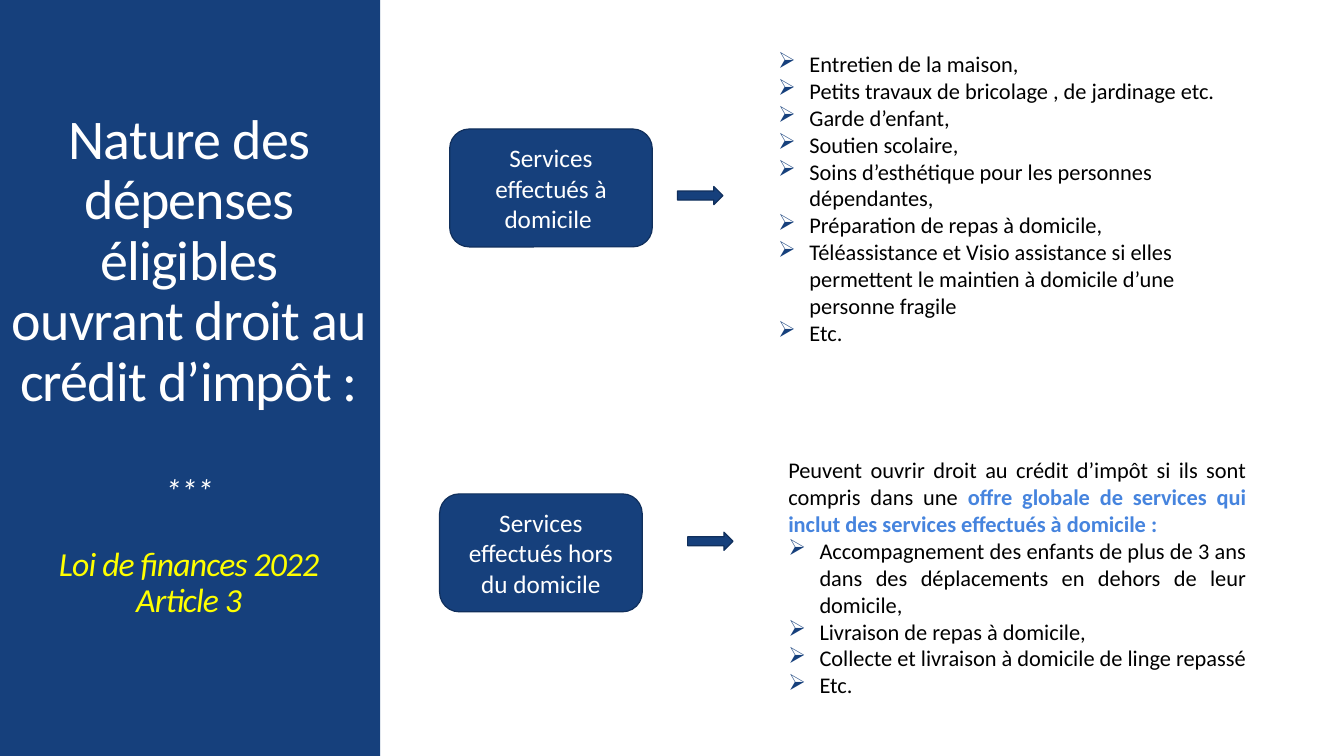
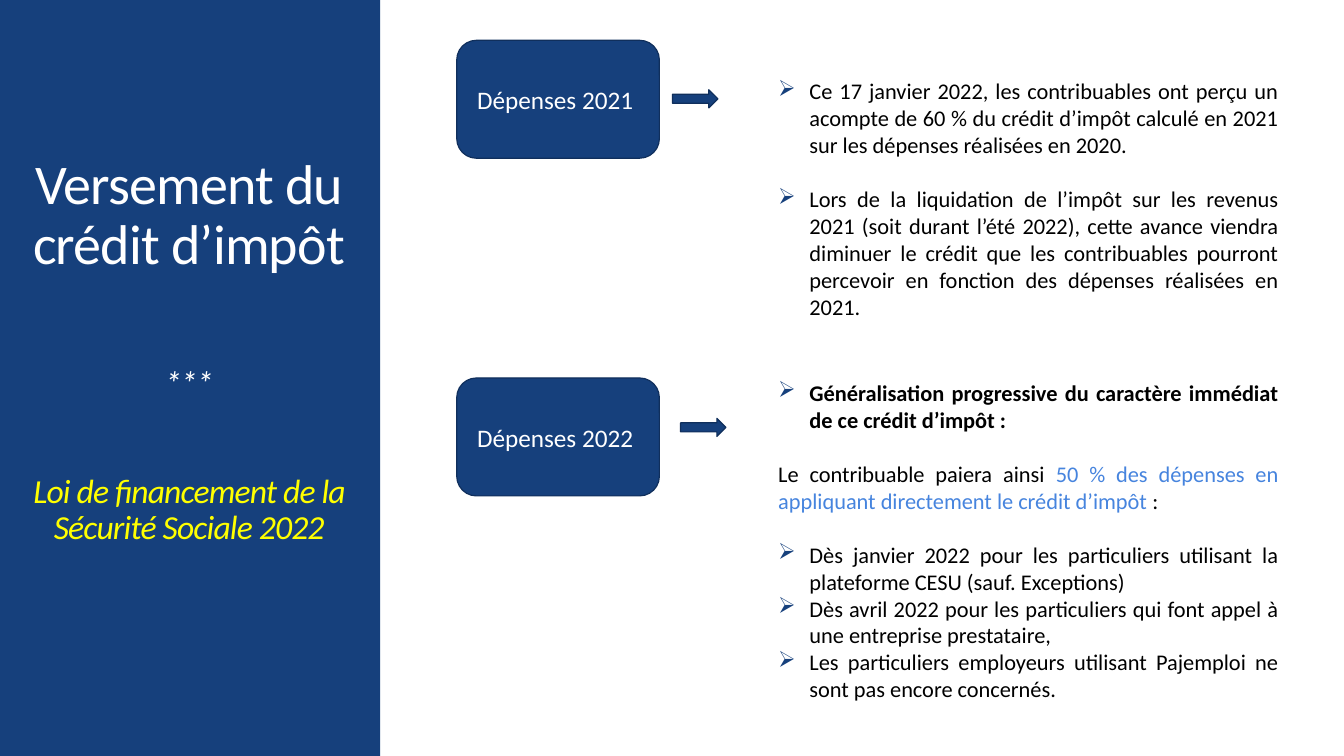
import lxml.etree
import pptx
import pptx.dml.color
import pptx.enum.shapes
import pptx.enum.text
import pptx.oxml.ns
import pptx.util

KIND = pptx.enum.shapes.MSO_SHAPE
ALIGN = pptx.enum.text.PP_ALIGN
ANCHOR = pptx.enum.text.MSO_ANCHOR
SCALE = 9144  # EMU per px, 100 px to the inch


def px(size):
    return pptx.util.Emu(size * SCALE)


class Theme:
    """Colours, type sizes and text styles."""
    font = "Calibri"
    navy, edge, sky = "16407C", "102F5C", "4684DE"
    white, black, yellow = "FFFFFF", "000000", "FFFF00"
    line = 0.85
    tight = "-60"
    bullet, indent = "➢", 31
    text = {
        "title": {"size": 40, "color": white},
        "stars": {"size": 24, "color": white, "italic": True},
        "law": {"size": 24, "color": yellow, "italic": True},
        "label": {"size": 18, "color": white},
        "body": {"size": 16, "color": black},
        "bold": {"size": 16, "color": black, "bold": True},
        "key": {"size": 16, "color": sky},
        "strong": {"size": 16, "color": sky, "bold": True},
    }


class Deck:
    def __init__(self, theme):
        self.theme = theme
        self.show = pptx.Presentation()
        self.show.slide_width, self.show.slide_height = px(1333), px(750)
        self.slide = None

    # Slide with its side band and title
    def page(self, top, parts):
        self.slide = self.show.slides.add_slide(self.show.slide_layouts[6])
        self.shape(KIND.RECTANGLE, 0, 0, 377, 750, edge=False)
        frame = self.frame(0, top, 375, 730 - top)
        for style, text, gap in parts:
            para = self.para(frame, [(style, text)], ALIGN.CENTER, gap)
            para.line_spacing = 0.9
            for run in para.runs:
                run._r.get_or_add_rPr().set("spc", self.theme.tight)

    # Preset shape in the theme colours
    def shape(self, kind, left, top, width, height, edge=True):
        shape = self.slide.shapes.add_shape(
            kind, px(left), px(top), px(width), px(height))
        shape.shadow.inherit = False
        shape.fill.solid()
        shape.fill.fore_color.rgb = self.color(self.theme.navy)
        if edge:
            shape.line.color.rgb = self.color(self.theme.edge)
            shape.line.width = pptx.util.Pt(self.theme.line)
        else:
            shape.line.fill.background()
        return shape

    # Rounded label
    def label(self, left, top, text):
        frame = self.shape(KIND.ROUNDED_RECTANGLE, left, top, 201, 117).text_frame
        self.setup(frame, ANCHOR.MIDDLE)
        self.para(frame, [("label", text)], ALIGN.CENTER)

    # Block arrow
    def arrow(self, left, top):
        self.shape(KIND.RIGHT_ARROW, left, top, 45, 18)

    # Text block: each row is (bulleted, runs, gap before)
    def body(self, left, top, width, height, rows, align=ALIGN.JUSTIFY):
        frame = self.frame(left, top, width, height)
        for point, runs, gap in rows:
            self.para(frame, runs, align, gap, point)

    def frame(self, left, top, width, height):
        box = self.slide.shapes.add_textbox(
            px(left), px(top), px(width), px(height))
        self.setup(box.text_frame, ANCHOR.TOP)
        return box.text_frame

    def setup(self, frame, anchor):
        frame.word_wrap = True
        frame.vertical_anchor = anchor

    def para(self, frame, runs, align, gap=0, point=False):
        first = frame.paragraphs[0]
        para = frame.add_paragraph() if first.runs else first
        para.alignment = align
        if gap:
            para.space_before = pptx.util.Pt(gap)
        if point:
            self.bullet(para)
        for style, text in runs:
            run = para.add_run()
            run.text = text
            self.style(run.font, self.theme.text[style])
        return para

    def bullet(self, para):
        node = para._p.get_or_add_pPr()
        indent = px(self.theme.indent)
        node.set("marL", str(indent))
        node.set("indent", str(-indent))
        name = pptx.oxml.ns.qn
        tint = lxml.etree.SubElement(node, name("a:buClr"))
        lxml.etree.SubElement(tint, name("a:srgbClr"), val=self.theme.navy)
        lxml.etree.SubElement(node, name("a:buChar"), char=self.theme.bullet)

    def style(self, font, look):
        font.name = self.theme.font
        for key, value in look.items():
            if key == "color":
                font.color.rgb = self.color(value)
            else:
                setattr(font, key, pptx.util.Pt(value) if key == "size" else value)

    def color(self, code):
        return pptx.dml.color.RGBColor.from_string(code)


def point(text, gap=0, style="body"):
    return True, [(style, text)], gap


def plain(*runs, gap=0):
    return False, runs, gap


def nature(deck):
    deck.page(105, [
        ("title", "Nature des dépenses éligibles ouvrant droit au crédit d’impôt :", 0),
        ("stars", "***", 44),
        ("law", "Loi de finances 2022", 26),
        ("law", "Article 3", 0),
    ])
    # Services at home
    deck.label(446, 128, "Services effectués à domicile ")
    deck.arrow(672, 185)
    deck.body(762, 45, 485, 337, [point(text) for text in (
        "Entretien de la maison,",
        "Petits travaux de bricolage , de jardinage etc.",
        "Garde d’enfant,",
        "Soutien scolaire,",
        "Soins d’esthétique pour les personnes dépendantes,",
        "Préparation de repas à domicile,",
        "Téléassistance et Visio assistance si elles permettent le maintien "
        "à domicile d’une personne fragile",
        "Etc.",
    )], ALIGN.LEFT)
    # Services away from home
    deck.label(436, 490, "Services effectués hors du domicile")
    deck.arrow(682, 528)
    deck.body(772, 448, 474, 279, [
        plain(("body", "Peuvent ouvrir droit au crédit d’impôt si ils sont compris dans une "),
              ("strong", "offre globale de services qui inclut des services "
                         "effectués à domicile :")),
        point("Accompagnement des enfants de plus de 3 ans dans des "
              "déplacements en dehors de leur domicile,"),
        point("Livraison de repas à domicile,"),
        point("Collecte et livraison à domicile de linge repassé"),
        point("Etc."),
    ])


def payment(deck):
    gap = 19.5
    deck.page(150, [
        ("title", "Versement du crédit d’impôt", 0),
        ("stars", "***", 64),
        ("law", "Loi de financement de la Sécurité Sociale 2022", 51),
    ])
    # Spending in 2021
    deck.label(453, 40, "Dépenses 2021 ")
    deck.arrow(667, 89)
    deck.body(762, 72, 516, 290, [
        point("Ce 17 janvier 2022, les contribuables ont perçu un acompte de 60 % "
              "du crédit d’impôt calculé en 2021 sur les dépenses réalisées en 2020."),
        point("Lors de la liquidation de l’impôt sur les revenus 2021 (soit durant "
              "l’été 2022), cette avance viendra diminuer le crédit que les "
              "contribuables pourront percevoir en fonction des dépenses "
              "réalisées en 2021.", gap),
    ])
    # Spending in 2022
    deck.label(453, 375, "Dépenses 2022 ")
    deck.arrow(675, 415)
    deck.body(762, 371, 516, 370, [
        point("Généralisation progressive du caractère immédiat de ce crédit "
              "d’impôt :", style="bold"),
        plain(("body", "Le contribuable paiera ainsi "),
              ("key", "50 % des dépenses en appliquant directement le crédit d’impôt "),
              ("body", ":"), gap=gap),
        point("Dès janvier 2022 pour les particuliers utilisant la plateforme "
              "CESU (sauf. Exceptions)", gap),
        point("Dès avril 2022 pour les particuliers qui font appel à une "
              "entreprise prestataire,"),
        point("Les particuliers employeurs utilisant Pajemploi ne sont pas "
              "encore concernés."),
    ])


def main():
    deck = Deck(Theme())
    nature(deck)
    payment(deck)
    deck.show.save("out.pptx")


if __name__ == "__main__":
    main()
